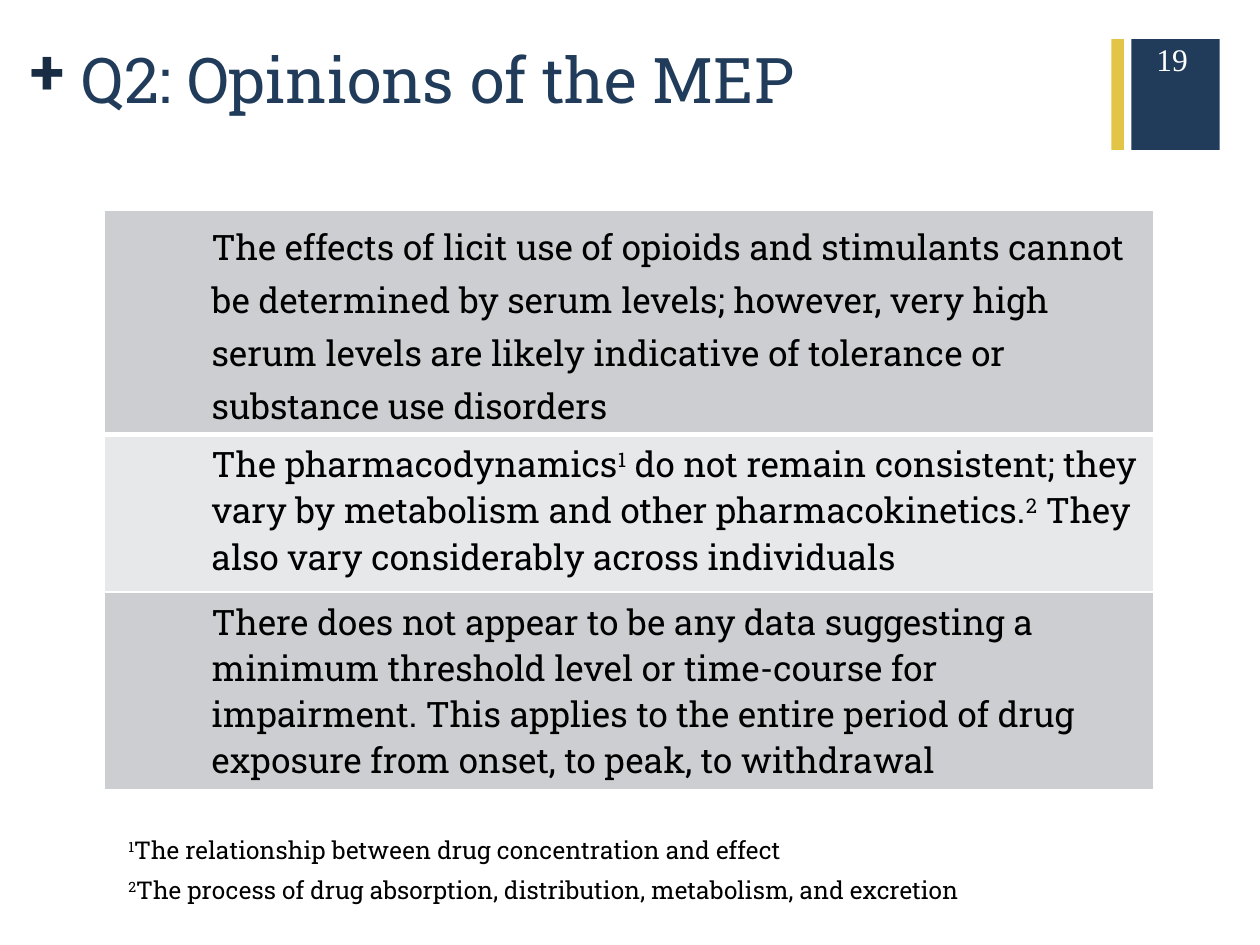
from lxml.etree import SubElement
from pptx import Presentation
from pptx.dml.color import RGBColor
from pptx.enum.shapes import MSO_SHAPE
from pptx.enum.text import MSO_ANCHOR, MSO_AUTO_SIZE, PP_ALIGN
from pptx.oxml.ns import qn
from pptx.util import Inches, Pt

SLAB, SERIF = "Roboto Slab", "Times New Roman"
NAVY, DARK_NAVY, GOLD = "203C5A", "182D44", "E2C446"
WHITE, BLACK = "FFFFFF", "000000"
BANDS = ("CCCED1", "E7E8EA")

# Runs alternate between normal text and superscript, starting with normal.
OPINIONS = [
    ["The effects of licit use of opioids and stimulants cannot be determined "
     "by serum levels; however, very high serum levels are likely indicative "
     "of tolerance or substance use disorders"],
    ["The pharmacodynamics", "1",
     " do not remain consistent; they vary by metabolism and other "
     "pharmacokinetics.", "2",
     " They also vary considerably across individuals"],
    ["There does not appear to be any data suggesting a minimum threshold "
     "level or time-course for impairment. This applies to the entire period "
     "of drug exposure from onset, to peak, to withdrawal"],
]
FOOTNOTES = [
    ["", "1", "The relationship between drug concentration and effect"],
    ["", "2", "The process of drug absorption, distribution, metabolism, and excretion"],
]


def color(hex_value):
    return RGBColor.from_string(hex_value)


def box(*lengths):
    return [Inches(length) for length in lengths]


def write(paragraph, parts, size, font=SLAB, ink=BLACK, bold=False):
    """Fill a paragraph with parts, every second one superscript."""
    for index, part in enumerate(parts):
        if not part:
            continue
        run = paragraph.add_run()
        run.text = part
        run.font.size, run.font.name, run.font.bold = Pt(size), font, bold
        run.font.color.rgb = color(ink)
        if index % 2:
            run.font._element.set("baseline", "30000")


def add_block(slide, place, fill):
    block = slide.shapes.add_shape(MSO_SHAPE.RECTANGLE, *box(*place))
    block.shadow.inherit = False
    block.fill.solid()
    block.fill.fore_color.rgb = color(fill)
    block.line.fill.background()


def add_label(slide, place, paragraphs, size, inset=True, space_after=0, **style):
    frame = slide.shapes.add_textbox(*box(*place)).text_frame
    frame.word_wrap = True
    if not inset:
        frame.margin_left = frame.margin_right = 0
        frame.margin_top = frame.margin_bottom = 0
    for index, parts in enumerate(paragraphs):
        paragraph = frame.add_paragraph() if index else frame.paragraphs[0]
        paragraph.space_after = Pt(space_after)
        write(paragraph, parts, size, **style)


def set_title(slide, place, text):
    title = slide.shapes.title
    title.left, title.top, title.width, title.height = box(*place)
    frame = title.text_frame
    frame.auto_size = MSO_AUTO_SIZE.NONE
    frame.vertical_anchor = MSO_ANCHOR.TOP
    frame.paragraphs[0].alignment = PP_ALIGN.LEFT
    write(frame.paragraphs[0], [text], 36, ink=NAVY)


def set_borders(cell, **widths):
    """Draw white borders, widths in points; a side not named gets no line."""
    properties = cell._tc.get_or_add_tcPr()
    for position, side in enumerate("LRTB"):
        width = widths.get(side, 0)
        line = SubElement(properties, qn(f"a:ln{side}"), w=str(Pt(width)))
        if width:
            fill = SubElement(line, qn("a:solidFill"))
            SubElement(fill, qn("a:srgbClr"), val=WHITE)
        else:
            SubElement(line, qn("a:noFill"))
        properties.insert(position, line)  # borders come before the fill


def add_opinions(slide, left, top, columns, rows):
    place = box(left, top, sum(columns), sum(rows))
    table = slide.shapes.add_table(len(rows), len(columns), *place).table
    table.first_row = table.horz_banding = False
    for column, width in zip(table.columns, columns):
        column.width = Inches(width)
    for index, (row, height, parts) in enumerate(zip(table.rows, rows, OPINIONS)):
        row.height = Inches(height)
        for cell, outer_side in zip(row.cells, "LR"):
            cell.fill.solid()
            cell.fill.fore_color.rgb = color(BANDS[index % 2])
            set_borders(cell, **{outer_side: 1},
                        T=3 if index == 1 else 1, B=1 if index else 3)
        paragraph = row.cells[1].text_frame.paragraphs[0]
        if index == 0:
            paragraph.line_spacing = 1.15
        write(paragraph, parts, 20)


def main():
    deck = Presentation()
    deck.slide_width, deck.slide_height = box(10, 7.5)
    slide = deck.slides.add_slide(deck.slide_layouts[5])

    add_block(slide, (8.98, 0.31, 0.7, 0.88), NAVY)
    add_block(slide, (8.82, 0.31, 0.1, 0.88), GOLD)
    add_label(slide, (0.24, 0.25, 0.28, 0.61), [["+"]], 36,
              inset=False, ink=DARK_NAVY, bold=True)
    set_title(slide, (0.55, 0.27, 8.26, 0.65), "Q2: Opinions of the MEP")
    add_label(slide, (9.08, 0.27, 0.61, 0.4), [["19"]], 18, font=SERIF, ink=WHITE)
    add_opinions(slide, 0.83, 1.67, columns=(0.75, 7.58), rows=(1.78, 1.25, 1.57))
    add_label(slide, (0.92, 6.58, 7.75, 0.66), FOOTNOTES, 14, space_after=6)

    deck.save("out.pptx")


if __name__ == "__main__":
    main()
